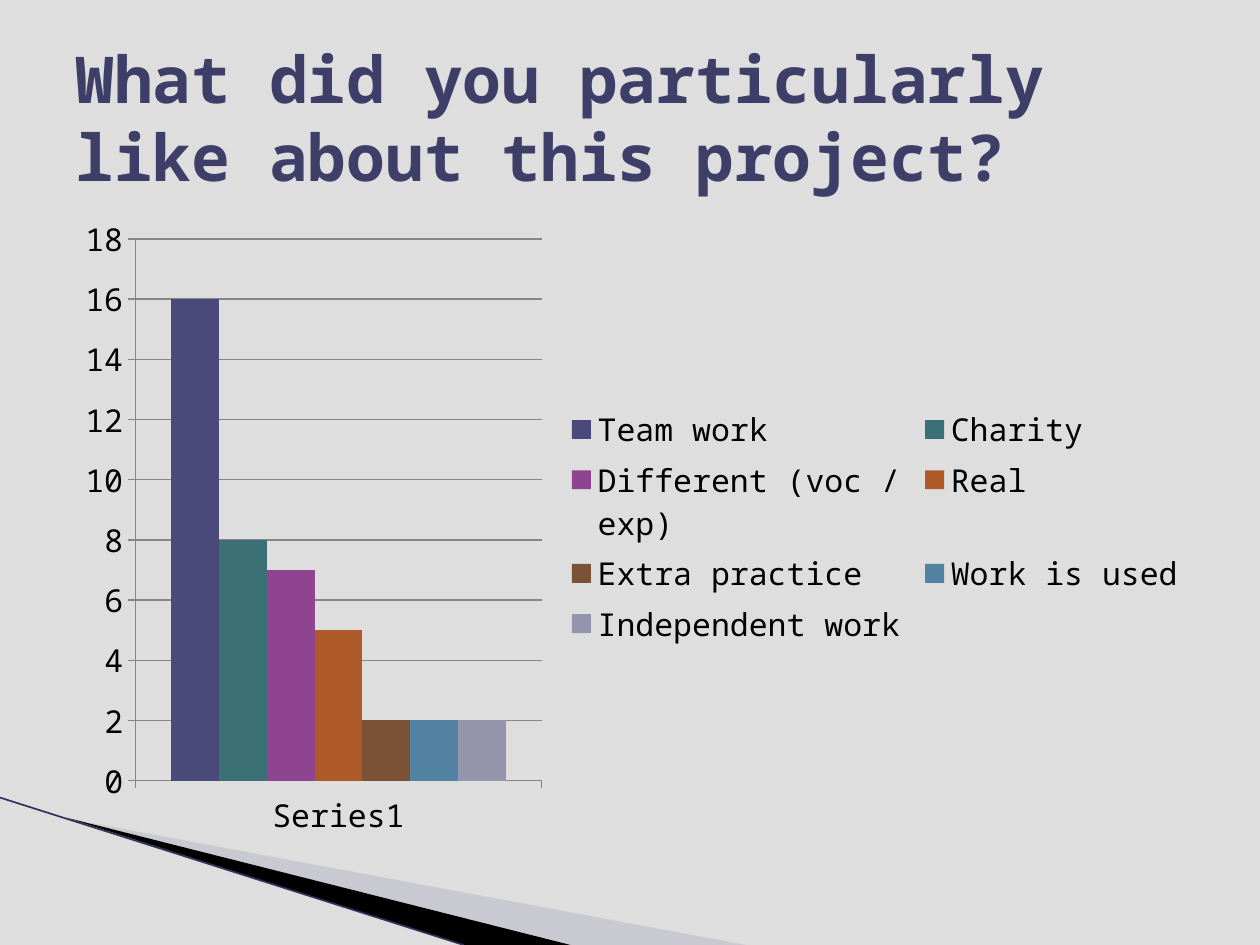
from lxml.etree import SubElement
from pptx import Presentation
from pptx.chart.data import CategoryChartData
from pptx.dml.color import RGBColor
from pptx.enum.chart import XL_CHART_TYPE, XL_LEGEND_POSITION, XL_TICK_MARK
from pptx.enum.shapes import MSO_CONNECTOR
from pptx.enum.text import MSO_ANCHOR
from pptx.oxml import parse_xml
from pptx.oxml.ns import nsdecls, qn
from pptx.util import Inches, Pt

FONT = "Noto Sans Mono"
COLORS = {
    "background": "DEDEDE",
    "title": "3E3F68",
    "text": "000000",
    "axis": "868686",
    "pale wedge": "AAAABF",
    "dark wedge": "000000",
    "edge": "31315C",
}
# Answer, number of votes, bar colour
ANSWERS = [
    ("Team work", 16, "494A79"),
    ("Charity", 8, "3B7176"),
    ("Different (voc /\nexp)", 7, "8E4491"),
    ("Real", 5, "AE5928"),
    ("Extra practice", 2, "7B5235"),
    ("Work is used", 2, "5182A2"),
    ("Independent work", 2, "9594AD"),
]


def rgb(name):
    return RGBColor.from_string(COLORS[name])


def add_wedge(slide, points, color, opacity=100):
    """Draw a filled polygon from points in inches."""
    corners = [(Inches(x), Inches(y)) for x, y in points]
    builder = slide.shapes.build_freeform(*corners[0])
    builder.add_line_segments(corners[1:], close=True)
    shape = builder.convert_to_shape()
    shape.shadow.inherit = False
    shape.fill.solid()
    shape.fill.fore_color.rgb = rgb(color)
    shape.line.fill.background()
    if opacity < 100:
        fill_color = shape._element.spPr.find(qn("a:solidFill"))[0]
        SubElement(fill_color, qn("a:alpha"), val=str(opacity * 1000))


def add_line(slide, start, end, color, width):
    points = [Inches(value) for value in start + end]
    connector = slide.shapes.add_connector(MSO_CONNECTOR.STRAIGHT, *points)
    connector.line.color.rgb = rgb(color)
    connector.line.width = Pt(width)
    SubElement(connector._element.spPr, qn("a:effectLst"))


def add_title(slide, text):
    box = slide.shapes.add_textbox(Inches(0.5), Inches(0.3), Inches(9), Inches(1.25))
    frame = box.text_frame
    frame.word_wrap = True
    frame.vertical_anchor = MSO_ANCHOR.MIDDLE
    run = frame.paragraphs[0].add_run()
    run.text = text
    run.font.name = FONT
    run.font.size = Pt(36.9)
    run.font.bold = True
    run.font.color.rgb = rgb("title")


def set_layout(element, x, y, width, height, inner=False):
    """Place a chart part by fractions of the chart area."""
    for old_layout in element.findall(qn("c:layout")):
        element.remove(old_layout)
    target = '<c:layoutTarget val="inner"/>' if inner else ""
    layout = parse_xml(
        f'<c:layout {nsdecls("c")}><c:manualLayout>{target}'
        '<c:xMode val="edge"/><c:yMode val="edge"/>'
        f'<c:x val="{x}"/><c:y val="{y}"/><c:w val="{width}"/><c:h val="{height}"/>'
        "</c:manualLayout></c:layout>"
    )
    # The layout leads the plot area, but follows the legend position
    element.insert(0 if inner else 1, layout)


def style_axis(axis):
    axis.major_tick_mark = XL_TICK_MARK.OUTSIDE
    axis.minor_tick_mark = XL_TICK_MARK.NONE
    axis.format.line.color.rgb = rgb("axis")
    axis.format.line.width = Pt(0.75)


def add_answers_chart(slide):
    data = CategoryChartData()
    data.categories = ["Series1"]
    for name, votes, _ in ANSWERS:
        data.add_series(name, [votes])
    chart = slide.shapes.add_chart(
        XL_CHART_TYPE.COLUMN_CLUSTERED,
        Inches(0.5), Inches(1.62), Inches(9), Inches(5.12), data,
    ).chart
    chart.has_title = False
    chart.font.name = FONT
    chart.font.size = Pt(18)
    chart.font.color.rgb = rgb("text")

    # Bars
    plot = chart.plots[0]
    plot.gap_width = 150
    plot.overlap = 0
    plot.vary_by_categories = False
    for series, (_, _, color) in zip(plot.series, ANSWERS):
        series.format.fill.solid()
        series.format.fill.fore_color.rgb = RGBColor.from_string(color)

    # Axes
    style_axis(chart.category_axis)
    value_axis = chart.value_axis
    style_axis(value_axis)
    value_axis.minimum_scale = 0
    value_axis.maximum_scale = 18
    value_axis.major_unit = 2
    value_axis.has_major_gridlines = True
    value_axis.major_gridlines.format.line.color.rgb = rgb("axis")
    value_axis.major_gridlines.format.line.width = Pt(0.75)

    # Legend in two columns beside the plot
    chart.has_legend = True
    chart.legend.position = XL_LEGEND_POSITION.RIGHT
    chart.legend.include_in_layout = False
    set_layout(chart.legend._element, 0.436, 0.305, 0.56, 0.39)
    plot_area = chart._chartSpace.chart.plotArea
    set_layout(plot_area, 0.064, 0.054, 0.358, 0.84, inner=True)


def main():
    presentation = Presentation()
    presentation.slide_width = Inches(10)
    presentation.slide_height = Inches(7.5)
    slide = presentation.slides.add_slide(presentation.slide_layouts[6])
    slide.background.fill.solid()
    slide.background.fill.fore_color.rgb = rgb("background")

    # Corner decoration
    add_wedge(slide, [(0.55, 6.5), (5.92, 7.5), (4.54, 7.5)], "pale wedge", 40)
    add_wedge(slide, [(0.53, 6.49), (4.53, 7.5), (3.68, 7.5)], "dark wedge")
    add_line(slide, (0, 6.33), (3.68, 7.5), "edge", 0.95)

    # Content
    add_answers_chart(slide)
    add_title(slide, "What did you particularly like about this project?")
    presentation.save("out.pptx")


if __name__ == "__main__":
    main()
